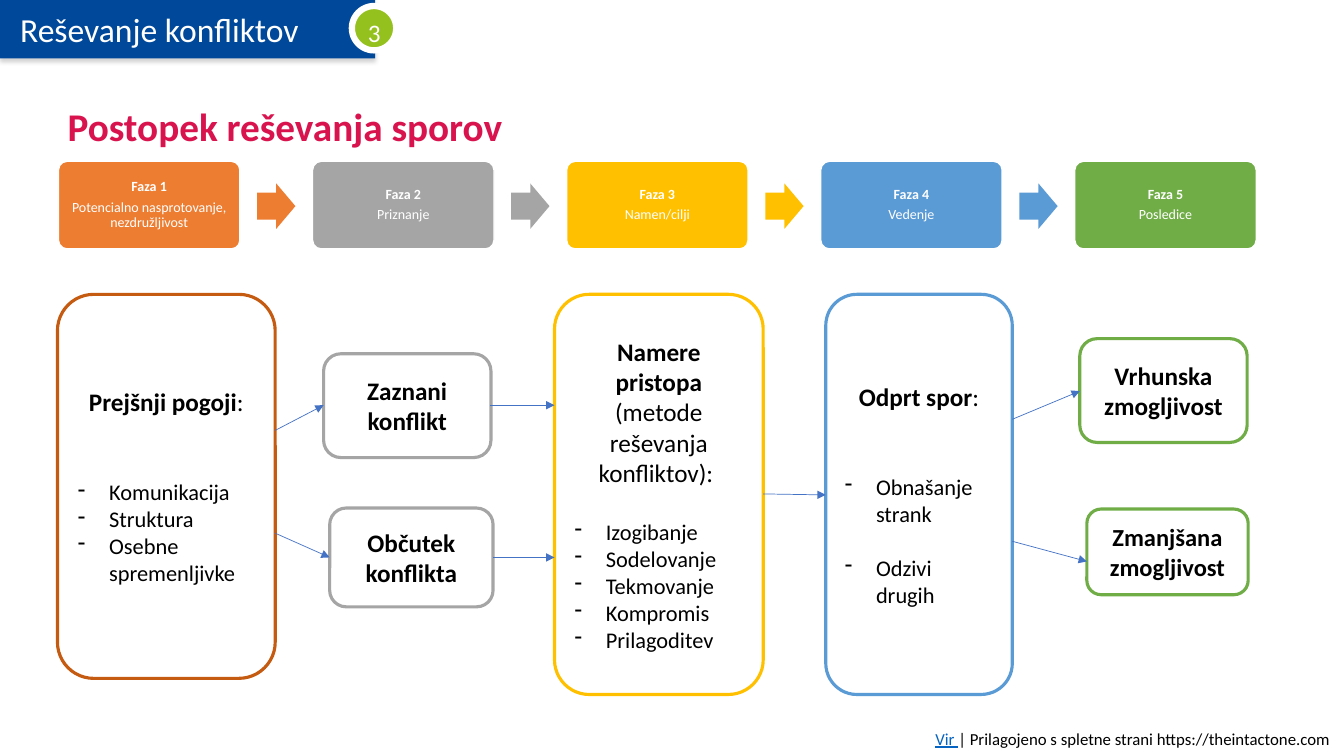
from dataclasses import dataclass

from lxml.etree import SubElement
from pptx import Presentation
from pptx.dml.color import RGBColor
from pptx.enum.shapes import MSO_CONNECTOR, MSO_SHAPE
from pptx.enum.text import MSO_ANCHOR, MSO_AUTO_SIZE, PP_ALIGN
from pptx.oxml.ns import qn
from pptx.util import Emu, Pt

PX = 9144  # 100 px to the inch
FONT = "Calibri"
WHITE, BLACK = "FFFFFF", "000000"
ORANGE, GREY, GOLD, BLUE, GREEN = "ED7D31", "A5A5A5", "FFC000", "5B9BD5", "70AD47"
INDENT = 31
PHASE_LEFT, PHASE_TOP, PHASE_STEP = 58, 160, 252
ARROW_LEFT, ARROW_TOP = 255, 182

Box = tuple[int, int, int, int]


@dataclass(frozen=True)
class Run:
    text: str
    bold: bool = False
    color: str = BLACK
    underline: bool = False


@dataclass(frozen=True)
class Para:
    runs: tuple[Run, ...]
    size: float = 18
    align: PP_ALIGN = PP_ALIGN.CENTER
    before: float = 0
    spacing: float = 1.0
    dash: bool = False


@dataclass(frozen=True)
class Phase:
    label: str
    topic: str
    color: str


@dataclass(frozen=True)
class Card:
    box: Box
    color: str
    paras: tuple[Para, ...]


@dataclass(frozen=True)
class Link:
    start: tuple[int, int]
    end: tuple[int, int]


def items(*texts: str, gap: float, between: float = 0) -> tuple[Para, ...]:
    """Dashed list, with gap points above it and between points inside it."""
    return tuple(
        Para((Run(text),), 16, PP_ALIGN.LEFT, between if n else gap, dash=True)
        for n, text in enumerate(texts)
    )


def heading(bold: str, plain: str = "", size: float = 18) -> Para:
    return Para((Run(bold, True), Run(plain)) if plain else (Run(bold, True),), size)


PHASES = (
    Phase("Faza 1", "Potencialno nasprotovanje, nezdružljivost", ORANGE),
    Phase("Faza 2", "Priznanje", GREY),
    Phase("Faza 3", "Namen/cilji", GOLD),
    Phase("Faza 4", "Vedenje", BLUE),
    Phase("Faza 5", "Posledice", GREEN),
)
CARDS = (
    Card((57, 292, 216, 381), "C55A11", (
        heading("Prejšnji pogoji", ":"),
        *items("Komunikacija", "Struktura", "Osebne spremenljivke", gap=44))),
    Card((321, 351, 166, 103), GREY, (heading("Zaznani konflikt"),)),
    Card((327, 504, 162, 98), GREY, (heading("Občutek konflikta"),)),
    Card((550, 292, 207, 397), GOLD, (
        heading("Namere pristopa ", "(metode reševanja konfliktov): "),
        *items("Izogibanje", "Sodelovanje", "Tekmovanje", "Kompromis",
               "Prilagoditev", gap=22))),
    Card((819, 292, 185, 397), BLUE, (
        heading("Odprt spor", ":"),
        *items("Obnašanje strank", "Odzivi drugih", gap=44, between=19.5))),
    Card((1071, 336, 166, 103), GREEN, (heading("Vrhunska zmogljivost"),)),
    Card((1078, 505, 160, 85), GREEN, (heading("Zmanjšana zmogljivost", size=17.5),)),
)
LINKS = (
    Link((273, 427), (321, 402)),
    Link((273, 529), (327, 553)),
    Link((486, 402), (550, 402)),
    Link((489, 553), (550, 553)),
    Link((757, 490), (819, 491)),
    Link((1004, 416), (1071, 388)),
    Link((1004, 537), (1078, 557)),
)


def px(value: int) -> Emu:
    return Emu(value * PX)


def rgb(color: str) -> RGBColor:
    return RGBColor.from_string(color)


def assign(target, values: dict) -> None:
    for name, value in values.items():
        setattr(target, name, value)


def write(frame, paras: tuple[Para, ...], anchor=MSO_ANCHOR.MIDDLE, **margins) -> None:
    assign(frame, {"word_wrap": True, "auto_size": MSO_AUTO_SIZE.NONE,
                   "vertical_anchor": anchor, **margins})
    for n, para in enumerate(paras):
        line = frame.add_paragraph() if n else frame.paragraphs[0]
        assign(line, {"alignment": para.align, "space_before": Pt(para.before),
                      "line_spacing": para.spacing})
        if para.dash:
            properties = line._p.get_or_add_pPr()
            properties.set("marL", str(px(INDENT)))
            properties.set("indent", str(px(-INDENT)))
            SubElement(properties, qn("a:buChar"), char="-")
        for part in para.runs:
            run = line.add_run()
            run.text = part.text
            assign(run.font, {"name": FONT, "size": Pt(para.size), "bold": part.bold,
                              "underline": part.underline})
            run.font.color.rgb = rgb(part.color)


def draw_shape(slide, kind: MSO_SHAPE, box: Box, fill: str, line: str = "",
               width: float = 1):
    shape = slide.shapes.add_shape(kind, *map(px, box))
    shape.shadow.inherit = False
    shape.fill.solid()
    shape.fill.fore_color.rgb = rgb(fill)
    if line:
        shape.line.color.rgb = rgb(line)
        shape.line.width = Pt(width)
    else:
        shape.line.fill.background()
    return shape


def draw_text(slide, box: Box, para: Para) -> None:
    write(slide.shapes.add_textbox(*map(px, box)).text_frame, (para,), MSO_ANCHOR.TOP)


def draw_header(slide) -> None:
    banner = draw_shape(slide, MSO_SHAPE.RECTANGLE, (0, 0, 372, 58), "004899")
    effects = banner._element.spPr.find(qn("a:effectLst"))
    shadow = SubElement(effects, qn("a:outerShdw"), blurRad=str(Pt(3.1)),
                        dist=str(Pt(1.8)), dir="5400000", rotWithShape="0")
    tint = SubElement(shadow, qn("a:srgbClr"), val="808080")
    SubElement(tint, qn("a:alpha"), val="35000")
    write(banner.text_frame,
          (Para((Run("Reševanje konfliktov", color=WHITE),), 24, PP_ALIGN.LEFT),),
          margin_left=px(20))
    draw_shape(slide, MSO_SHAPE.OVAL, (349, 6, 44, 44), "95C11F", WHITE, 4.5)
    draw_text(slide, (355, -3, 35, 51),
              Para((Run("3", color=WHITE),), 18, PP_ALIGN.LEFT, spacing=1.5))


def draw_title(slide) -> None:
    title = slide.shapes.title
    assign(title, dict(zip(("left", "top", "width", "height"),
                           map(px, (57, 95, 1246, 66)))))
    write(title.text_frame, (Para((Run("Postopek reševanja sporov", True, "D8134D"),),
                                  28, PP_ALIGN.LEFT, spacing=0.9),))


def draw_phase(slide, index: int, phase: Phase) -> None:
    shift = index * PHASE_STEP
    tile = draw_shape(slide, MSO_SHAPE.ROUNDED_RECTANGLE,
                      (PHASE_LEFT + shift, PHASE_TOP, 180, 87), phase.color, WHITE)
    tile.adjustments[0] = 0.1
    sides = ("left", "top", "right", "bottom")
    write(tile.text_frame,
          (Para((Run(phase.label, True, WHITE),), 10, spacing=0.9),
           Para((Run(phase.topic, color=WHITE),), 10, before=4, spacing=0.9)),
          **{f"margin_{side}": px(4) for side in sides})
    if index < len(PHASES) - 1:
        arrow = draw_shape(slide, MSO_SHAPE.RIGHT_ARROW,
                           (ARROW_LEFT + shift, ARROW_TOP, 38, 45), phase.color)
        arrow.adjustments[0] = 0.6


def draw_card(slide, card: Card) -> None:
    shape = draw_shape(slide, MSO_SHAPE.FLOWCHART_ALTERNATE_PROCESS, card.box, WHITE,
                       card.color, 2.25)
    write(shape.text_frame, card.paras)


def draw_link(slide, link: Link) -> None:
    connector = slide.shapes.add_connector(MSO_CONNECTOR.STRAIGHT,
                                           *map(px, link.start + link.end))
    connector.line.color.rgb = rgb("4472C4")
    connector.line.width = Pt(0.5)
    SubElement(connector.line._get_or_add_ln(), qn("a:tailEnd"), type="triangle")
    SubElement(connector._element.spPr, qn("a:effectLst"))


def main() -> None:
    deck = Presentation()
    assign(deck, {"slide_width": px(1333), "slide_height": px(750)})
    slide = deck.slides.add_slide(deck.slide_layouts.get_by_name("Title Only"))
    draw_header(slide)
    draw_title(slide)
    for index, phase in enumerate(PHASES):
        draw_phase(slide, index, phase)
    for card in CARDS:
        draw_card(slide, card)
    draw_text(slide, (374, 718, 959, 30), Para(
        (Run("Vir ", color="0563C1", underline=True),
         Run("| Prilagojeno s spletne strani https://theintactone.com ")),
        12, PP_ALIGN.RIGHT))
    for link in LINKS:
        draw_link(slide, link)
    deck.save("out.pptx")


if __name__ == "__main__":
    main()
